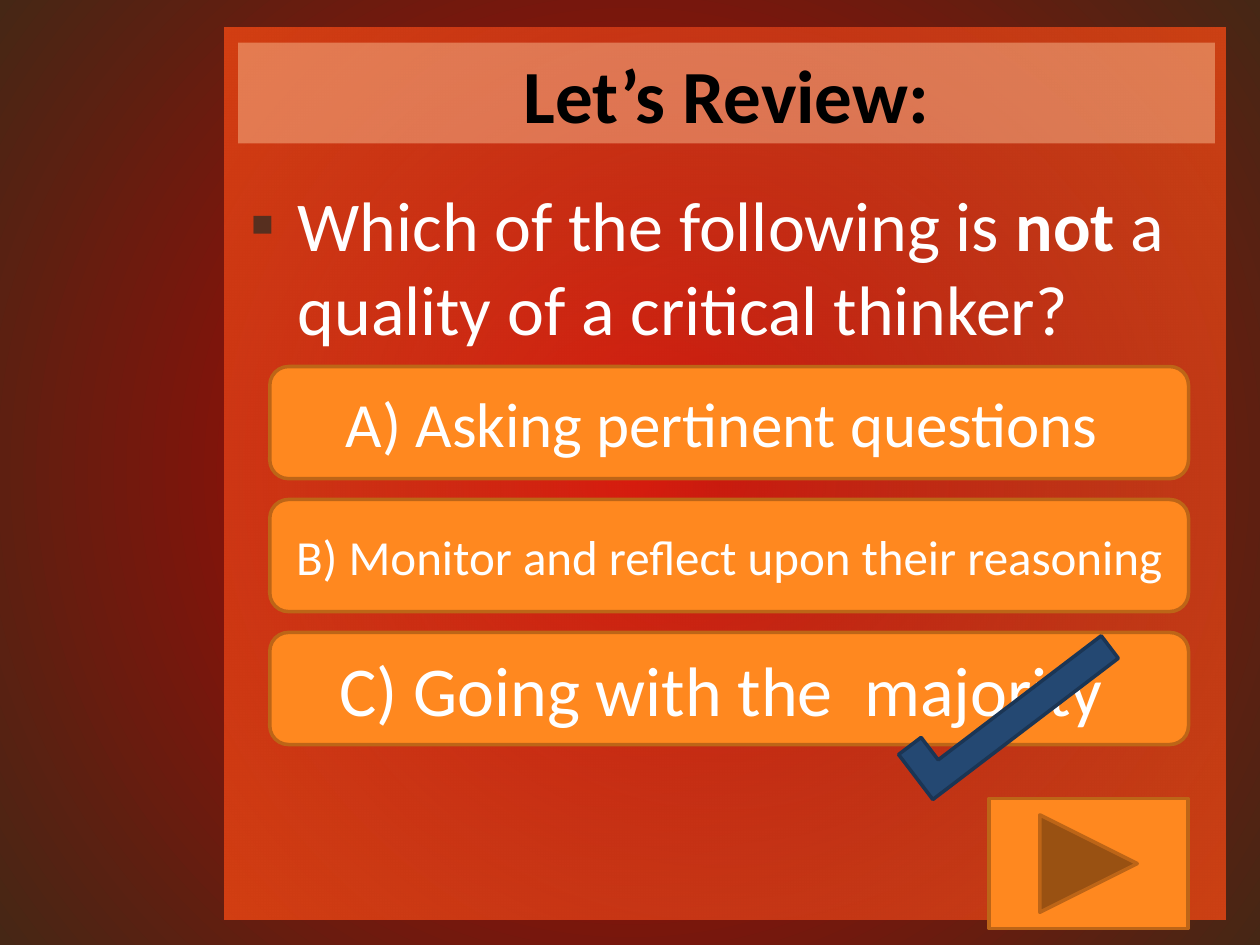
from dataclasses import dataclass

from lxml.etree import SubElement
from pptx import Presentation
from pptx.dml.color import RGBColor
from pptx.enum.shapes import MSO_SHAPE
from pptx.enum.text import MSO_ANCHOR, MSO_AUTO_SIZE, PP_ALIGN
from pptx.oxml import parse_xml
from pptx.oxml.ns import nsdecls, qn
from pptx.util import Cm, Pt

FONT = "Calibri"
BLACK = RGBColor(0x00, 0x00, 0x00)
WHITE = RGBColor(0xFF, 0xFF, 0xFF)
PEACH = RGBColor(0xFF, 0xCF, 0xA5)
ORANGE = RGBColor(0xFF, 0x88, 0x1F)
ORANGE_EDGE = RGBColor(0xBD, 0x65, 0x17)
NAVY = RGBColor(0x24, 0x48, 0x72)
NAVY_EDGE = RGBColor(0x1B, 0x35, 0x54)
BULLET = RGBColor(0x57, 0x2F, 0x1F)
DARK_RED = RGBColor(0xC0, 0x00, 0x00)
BROWN = RGBColor(0x46, 0x27, 0x15)
RED = RGBColor(0xFF, 0x51, 0x2C)
RED_ORANGE = RGBColor(0xFF, 0x4C, 0x14)


@dataclass
class Answer:
    text: str
    size: float


@dataclass
class Stop:
    color: RGBColor
    opacity: int = 100


ANSWERS = [
    Answer("A) Asking pertinent questions ", 36),
    Answer("B) Monitor and reflect upon their reasoning", 28),
    Answer("C) Going with the  majority ", 40),
]
ANSWER_TOP, ANSWER_PITCH = 7.39, 2.68


def add_text(p, text: str, *, size: float, color=WHITE, bold=False) -> None:
    r = p.add_run()
    r.text = text
    r.font.name, r.font.size, r.font.bold = FONT, Pt(size), bold
    r.font.color.rgb = color


def add_box(s, kind, left: float, top: float, width: float, height: float,
            fill=ORANGE, edge=ORANGE_EDGE):
    sp = s.shapes.add_shape(kind, Cm(left), Cm(top), Cm(width), Cm(height))
    sp.shadow.inherit = False
    sp.fill.solid()
    sp.fill.fore_color.rgb = fill
    if edge is None:
        sp.line.fill.background()
    else:
        sp.line.color.rgb = edge
        sp.line.width = Pt(2)
    return sp


def set_radial(props, inner: Stop, outer: Stop) -> None:
    """Replace the solid fill in props by a gradient from the centre."""
    stops = "".join(
        f'<a:gs pos="{pos}"><a:srgbClr val="{stop.color}">'
        f'<a:alpha val="{stop.opacity * 1000}"/></a:srgbClr></a:gs>'
        for pos, stop in ((0, inner), (100000, outer)))
    grad = parse_xml(
        f'<a:gradFill {nsdecls("a")} rotWithShape="1"><a:gsLst>{stops}</a:gsLst>'
        '<a:path path="circle"><a:fillToRect l="50000" t="50000" r="50000" '
        'b="50000"/></a:path></a:gradFill>')
    props.replace(props.find(qn("a:solidFill")), grad)


def add_bullet(p, char: str, color: RGBColor, indent: float) -> None:
    pPr = p._p.get_or_add_pPr()
    pPr.set("marL", str(Cm(indent)))
    pPr.set("indent", str(-Cm(indent)))
    SubElement(SubElement(pPr, qn("a:buClr")), qn("a:srgbClr")).set("val", str(color))
    SubElement(pPr, qn("a:buFont")).set("typeface", FONT)
    SubElement(pPr, qn("a:buChar")).set("char", char)


def main() -> None:
    prs = Presentation()
    prs.slide_width, prs.slide_height = Cm(25.4), Cm(19.05)
    s = prs.slides.add_slide(prs.slide_layouts[5])

    # Background and content panel, the panel behind the title
    s.background.fill.solid()
    set_radial(s._element.find(".//" + qn("p:bgPr")), Stop(DARK_RED), Stop(BROWN))
    panel = add_box(s, MSO_SHAPE.RECTANGLE, 4.52, 0.56, 20.19, 17.98, edge=None)
    set_radial(panel._element.spPr, Stop(RED, 30), Stop(RED_ORANGE, 72))
    s.shapes._spTree.insert(2, panel._element)

    # Title on a translucent band
    title = s.shapes.title
    title.left, title.top, title.width, title.height = Cm(4.8), Cm(0.86), Cm(19.69), Cm(2.03)
    title.fill.solid()
    title.fill.fore_color.rgb = PEACH
    clr = title._element.spPr.find(".//" + qn("a:srgbClr"))
    SubElement(clr, qn("a:alpha")).set("val", "43000")
    tf = title.text_frame
    tf.auto_size = MSO_AUTO_SIZE.NONE
    tf.vertical_anchor = MSO_ANCHOR.MIDDLE
    p = tf.paragraphs[0]
    p.alignment = PP_ALIGN.CENTER
    add_text(p, "Let’s Review:", size=42.9, color=BLACK, bold=True)

    # Question
    tf = s.shapes.add_textbox(Cm(4.8), Cm(3.53), Cm(19.96), Cm(14.61)).text_frame
    tf.word_wrap = True
    p = tf.paragraphs[0]
    add_bullet(p, "▪", BULLET, 0.95)
    add_text(p, "Which of the following is ", size=40)
    add_text(p, "not", size=40, bold=True)
    add_text(p, " a quality of a critical thinker?", size=40)

    # Answers
    for i, answer in enumerate(ANSWERS):
        sp = add_box(s, MSO_SHAPE.ROUNDED_RECTANGLE,
                     5.44, ANSWER_TOP + i * ANSWER_PITCH, 18.52, 2.26)
        sp.text_frame.word_wrap = True
        sp.text_frame.vertical_anchor = MSO_ANCHOR.MIDDLE
        p = sp.text_frame.paragraphs[0]
        p.alignment = PP_ALIGN.CENTER
        add_text(p, answer.text, size=answer.size)

    # Check mark on the right answer, and the forward button
    check = add_box(s, MSO_SHAPE.CORNER, 17.98, 13.67, 4.7, 1.14, NAVY, NAVY_EDGE)
    check.rotation = 322.7
    add_box(s, MSO_SHAPE.ACTION_BUTTON_FORWARD_OR_NEXT, 19.94, 16.1, 4.01, 2.62)

    prs.save("out.pptx")


if __name__ == "__main__":
    main()
